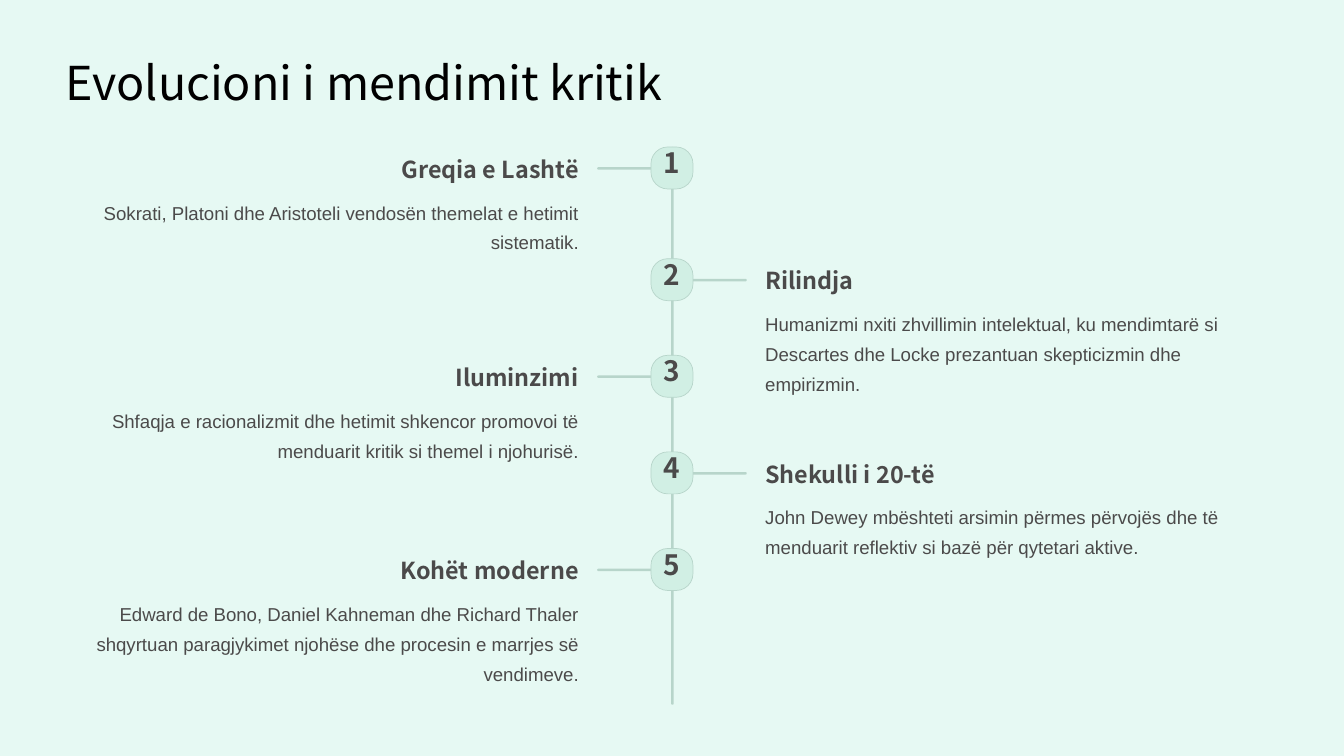
from pptx import Presentation
from pptx import util as u
from pptx.dml import color
from pptx.enum import shapes, text

HEADING_FONT = "Noto Sans CJK SC"
BODY_FONT = "Arial"
LEFT, RIGHT = text.PP_ALIGN.LEFT, text.PP_ALIGN.RIGHT

STAGES = [
    ("Greqia e Lashtë",
     "Sokrati, Platoni dhe Aristoteli vendosën themelat e hetimit sistematik."),
    ("Rilindja",
     "Humanizmi nxiti zhvillimin intelektual, ku mendimtarë si Descartes dhe Locke "
     "prezantuan skepticizmin dhe empirizmin."),
    ("Iluminzimi",
     "Shfaqja e racionalizmit dhe hetimit shkencor promovoi të menduarit kritik "
     "si themel i njohurisë."),
    ("Shekulli i 20-të",
     "John Dewey mbështeti arsimin përmes përvojës dhe të menduarit reflektiv "
     "si bazë për qytetari aktive."),
    ("Kohët moderne",
     "Edward de Bono, Daniel Kahneman dhe Richard Thaler shqyrtuan paragjykimet "
     "njohëse dhe procesin e marrjes së vendimeve."),
]


def rgb(value):
    return color.RGBColor.from_string(value)


class Timeline:
    background = "E6F9F3"
    ink = "4B4A4A"
    rail = "B7D5CA"
    badge_fill = "D1EFE4"

    def __init__(self, slide):
        self.slide = slide
        fill = slide.background.fill
        fill.solid()
        fill.fore_color.rgb = rgb(self.background)

    def rounded(self, left, top, width, height, fill, corner, outline=None):
        shape = self.slide.shapes.add_shape(
            shapes.MSO_SHAPE.ROUNDED_RECTANGLE,
            u.Inches(left), u.Inches(top), u.Inches(width), u.Inches(height))
        shape.shadow.inherit = False
        shape.adjustments[0] = corner
        shape.fill.solid()
        shape.fill.fore_color.rgb = rgb(fill)
        if outline:
            shape.line.color.rgb = rgb(outline)
            shape.line.width = u.Pt(0.6)
        else:
            shape.line.fill.background()

    def bar(self, left, top, width, height):
        self.rounded(left, top, width, height, self.rail, 0.5)

    def words(self, content, left, top, width, height, size, spacing,
              align=LEFT, font=HEADING_FONT, bold=False, ink=ink, wrap=False):
        box = self.slide.shapes.add_textbox(
            u.Inches(left), u.Inches(top), u.Inches(width), u.Inches(height))
        frame = box.text_frame
        frame.margin_left = frame.margin_right = 0
        frame.margin_top = frame.margin_bottom = 0
        frame.word_wrap = wrap
        paragraph = frame.paragraphs[0]
        paragraph.text = content
        paragraph.alignment = align
        paragraph.line_spacing = u.Pt(spacing)
        paragraph.font.name = font
        paragraph.font.size = u.Pt(size)
        paragraph.font.bold = bold
        paragraph.font.color.rgb = rgb(ink)

    def stage(self, number, top, heading, body):
        on_left = number % 2 == 1
        align = RIGHT if on_left else LEFT
        self.bar(7.11 if on_left else 8.22, top + 0.24, 0.67, 0.03)
        self.rounded(7.75, top, 0.5, 0.5, self.badge_fill, 0.4, self.rail)
        self.words(str(number), 7.83, top + 0.05, 0.33, 0.42, 24, 24,
                   text.PP_ALIGN.CENTER, bold=True)
        self.words(heading, 4.11 if on_left else 9.11, top + 0.08, 2.78, 0.35,
                   20, 25, align, bold=True)
        self.words(body, 0.78 if on_left else 9.11, top + 0.56, 6.11, 0.71,
                   16, 25.5, align, BODY_FONT, wrap=True)


def main():
    presentation = Presentation()
    presentation.slide_width = u.Inches(16)
    presentation.slide_height = u.Inches(9)
    timeline = Timeline(presentation.slides.add_slide(presentation.slide_layouts[6]))
    timeline.words("Evolucioni i mendimit kritik", 0.78, 0.61, 8.42, 0.69, 40, 50,
                   ink="000000")
    timeline.bar(7.99, 1.75, 0.03, 6.64)
    for number, (heading, body) in enumerate(STAGES, 1):
        top = 1.75 if number == 1 else 3.08 + 1.15 * (number - 2)
        timeline.stage(number, top, heading, body)
    presentation.save("out.pptx")


if __name__ == "__main__":
    main()
